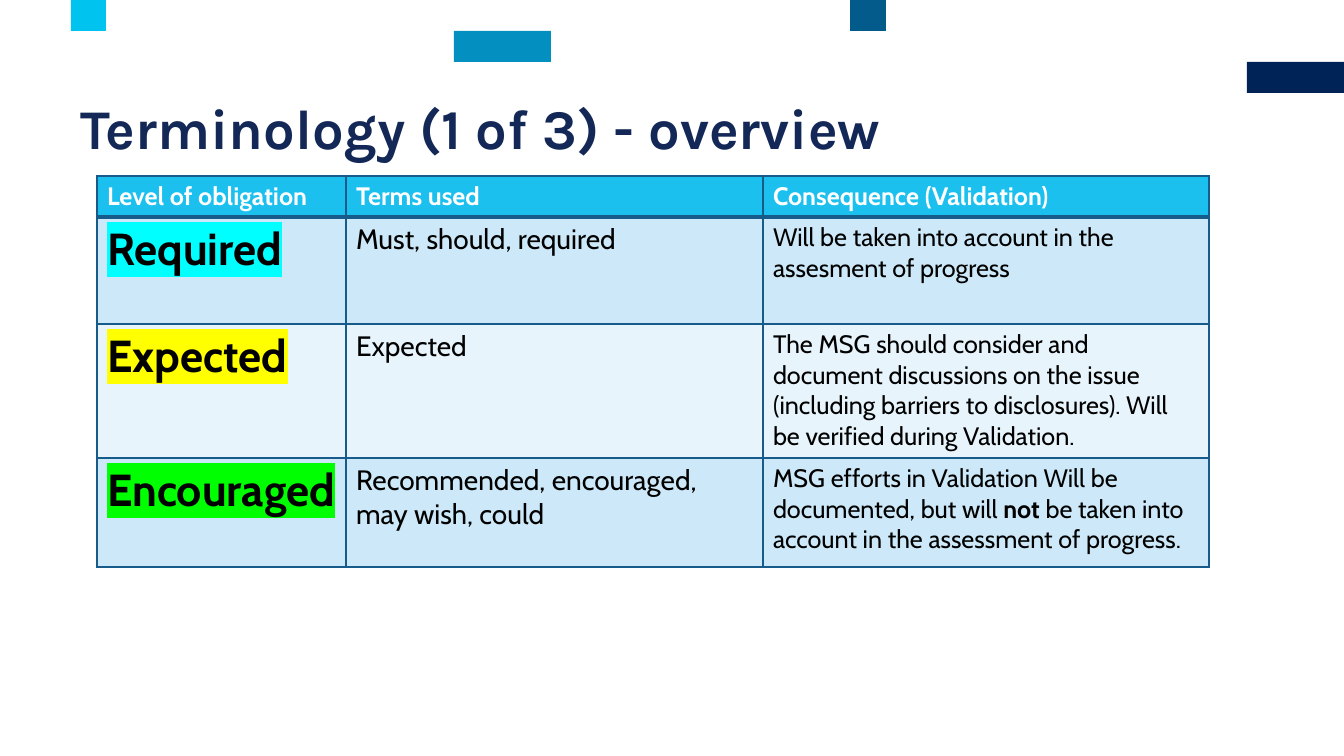
from lxml.etree import SubElement
from pptx import Presentation
from pptx.dml.color import RGBColor
from pptx.enum.shapes import MSO_SHAPE
from pptx.enum.text import MSO_ANCHOR
from pptx.oxml.ns import qn
from pptx.util import Pt

# Content
TITLE = "Terminology (1 of 3) - overview"
HEAD = ["Level of obligation", "Terms used", "Consequence (Validation)"]
LEVELS = [
    ("Required", "00FFFF", "Must, should, required",
     ["Will be taken into account in the assesment of progress"]),
    ("Expected", "FFFF00", "Expected",
     ["The MSG should consider and document discussions on the issue "
      "(including barriers to disclosures). Will be verified during Validation."]),
    ("Encouraged", "00FF00", "Recommended, encouraged, may wish, could",
     ["MSG efforts in Validation Will be documented, but will ", "not",
      " be taken into account in the assessment of progress."]),
]
BARS = [  # left, top, width, fill
    (1247, 62, 97, "002357"),
    (850, 0, 36, "025B8B"),
    (454, 31, 97, "038FBF"),
    (71, 0, 35, "00C3F0"),
]
BAR_H = 31
COLS = [249, 417, 446]
ROWS = [41, 107, 134, 109]
FILLS = ["1CC0EE", "CDE8F8", "E8F4FC", "CDE8F8"]
LINE = "165B89"

# Formats
TOP = dict(name="Karla", size=Pt(40), bold=True)
HEADER = dict(name="Cabin", size=Pt(18), bold=True)
LEVEL = dict(name="Cabin", size=Pt(32), bold=True)
TERMS = dict(name="Cabin", size=Pt(20), bold=False)
BODY = dict(name="Cabin", size=Pt(18), bold=False)
STRONG = dict(BODY, bold=True)


def px(n):
    return round(n * 12192000 / 1344)


def rgb(code):
    return RGBColor.from_string(code)


def paint(fill, code):
    fill.solid()
    fill.fore_color.rgb = rgb(code)


def write(para, text, style, color, mark=None):
    run = para.add_run()
    run.text = text
    for key, value in style.items():
        setattr(run.font, key, value)
    run.font.color.rgb = rgb(color)
    if mark:
        props = run.font._element
        glow = SubElement(props, qn("a:highlight"))
        SubElement(glow, qn("a:srgbClr"), val=mark)
        props.find(qn("a:latin")).addprevious(glow)


def edge(cell, widths):
    props = cell._tc.get_or_add_tcPr()
    for side, width in zip("LRTB", widths):
        line = SubElement(props, qn("a:ln" + side), w=str(Pt(width)))
        fill = SubElement(line, qn("a:solidFill"))
        SubElement(fill, qn("a:srgbClr"), val=LINE)


deck = Presentation()
deck.slide_width, deck.slide_height = px(1344), px(756)
slide = deck.slides.add_slide(deck.slide_layouts[6])
shapes = slide.shapes

# Colour bars along the top
for left, top, width, code in BARS:
    bar = shapes.add_shape(MSO_SHAPE.RECTANGLE, px(left), px(top), px(width), px(BAR_H))
    bar.shadow.inherit = False
    paint(bar.fill, code)
    bar.line.fill.background()

# Title
frame = shapes.add_textbox(px(71), px(95), px(1202), px(74)).text_frame
frame.word_wrap = True
frame.vertical_anchor = MSO_ANCHOR.MIDDLE
frame.paragraphs[0].line_spacing = 0.89
write(frame.paragraphs[0], TITLE, TOP, "132856")

# Table of obligation levels
table = shapes.add_table(len(ROWS), len(COLS), px(97), px(176),
                         px(sum(COLS)), px(sum(ROWS))).table
for col, width in zip(table.columns, COLS):
    col.width = px(width)
for row, height in zip(table.rows, ROWS):
    row.height = px(height)
for r, code in enumerate(FILLS):
    for c in range(len(COLS)):
        cell = table.cell(r, c)
        edge(cell, (1, 1, 3 if r == 1 else 1, 3 if r == 0 else 1))
        paint(cell.fill, code)

# Table text
for c, text in enumerate(HEAD):
    write(table.cell(0, c).text_frame.paragraphs[0], text, HEADER, "FFFFFF")
for r, (level, mark, terms, parts) in enumerate(LEVELS, 1):
    first, second, third = [table.cell(r, c).text_frame.paragraphs[0] for c in range(3)]
    write(first, level, LEVEL, "000100", mark)
    write(second, terms, TERMS, "000100")
    for n, part in enumerate(parts):
        write(third, part, STRONG if n == 1 else BODY, "000100")

deck.save("out.pptx")
